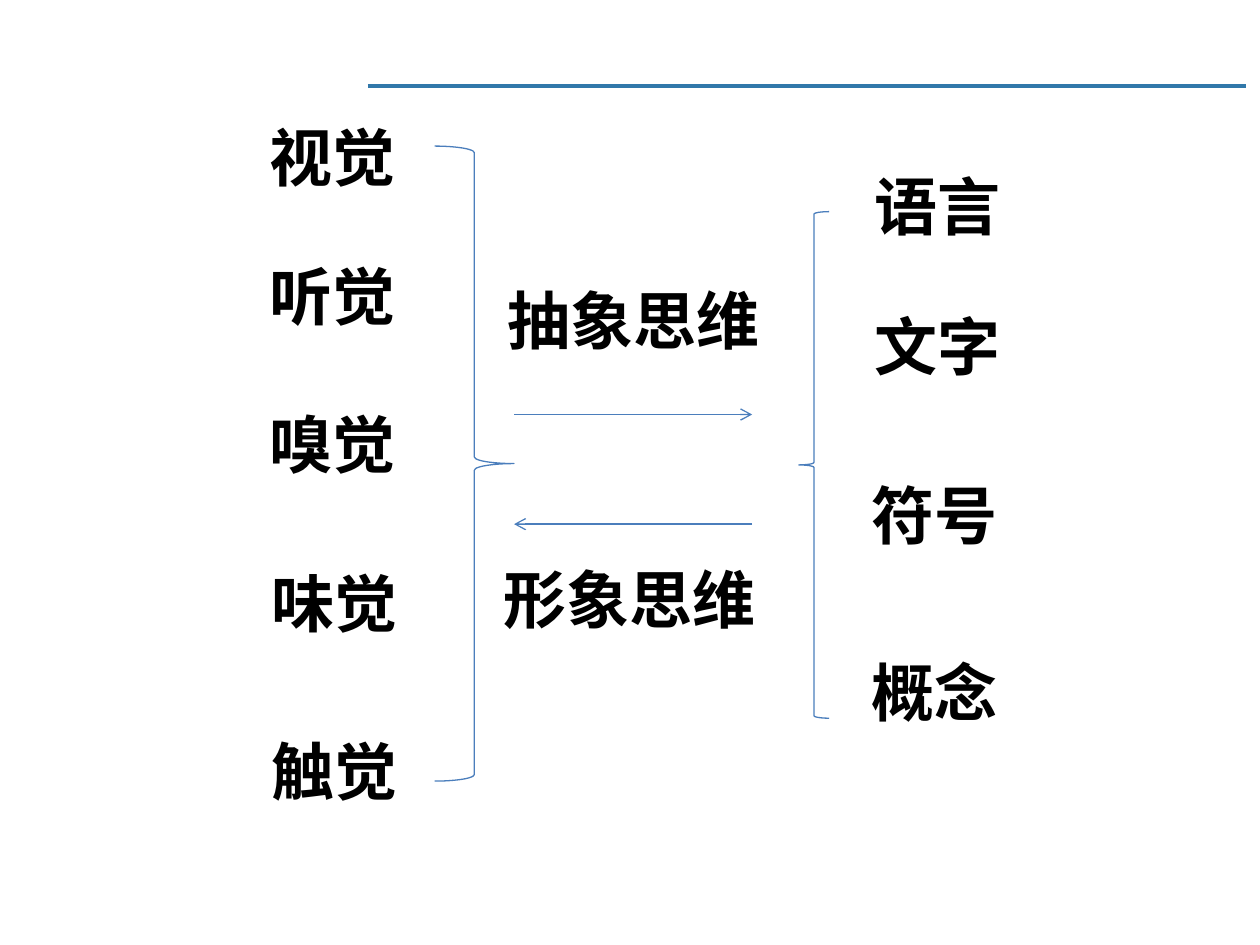
import pptx
import pptx.dml.color
import pptx.enum.shapes
import pptx.enum.text
import pptx.oxml.ns
import pptx.util
from lxml import etree
from pptx.util import Inches

BLUE = "4B7EBC"
SHAPES = pptx.enum.shapes.MSO_SHAPE


def color(value):
    """Turn a hex string into a colour."""
    return pptx.dml.color.RGBColor.from_string(value)


def write_text(frame, text, size=36, font="Calibri", fill="000000", bold=True):
    """Put formatted text into a text frame."""
    run = frame.paragraphs[0].add_run()
    run.text = text
    run.font.size = pptx.util.Pt(size)
    run.font.name = font
    run.font.bold = bold
    run.font.color.rgb = color(fill)


class Diagram:
    """Hold the line style and the slide being drawn."""

    def __init__(self, slide, line_color=BLUE, line_width=0.75):
        """Keep the slide and its default line style."""
        self.slide = slide
        self.line_color = line_color
        self.line_width = line_width

    def label(self, text, left, top, width=1.65, height=0.94):
        """Add a vertically centred text label."""
        shape = self.slide.shapes.add_textbox(
            Inches(left), Inches(top), Inches(width), Inches(height))
        shape.text_frame.word_wrap = True
        shape.text_frame.vertical_anchor = pptx.enum.text.MSO_ANCHOR.MIDDLE
        write_text(shape.text_frame, text)

    def brace(self, kind, left, top, width, height):
        """Add an unfilled brace."""
        shape = self.slide.shapes.add_shape(
            kind, Inches(left), Inches(top), Inches(width), Inches(height))
        shape.shadow.inherit = False
        shape.fill.background()
        shape.line.color.rgb = color(self.line_color)
        shape.line.width = pptx.util.Pt(self.line_width)

    def line(self, start, end, y, line_color=None, width=None, arrow=False):
        """Add a horizontal line, with an optional arrowhead at its end."""
        connector = self.slide.shapes.add_connector(
            pptx.enum.shapes.MSO_CONNECTOR.STRAIGHT,
            Inches(start), Inches(y), Inches(end), Inches(y))
        connector.line.color.rgb = color(line_color or self.line_color)
        connector.line.width = pptx.util.Pt(width or self.line_width)
        if arrow:
            etree.SubElement(connector.line._get_or_add_ln(),
                             pptx.oxml.ns.qn("a:tailEnd"), type="arrow")
        etree.SubElement(connector._element.spPr, pptx.oxml.ns.qn("a:effectLst"))


def main():
    """Build and save the slide."""
    presentation = pptx.Presentation()
    presentation.slide_width = Inches(10)
    presentation.slide_height = Inches(7.5)
    diagram = Diagram(presentation.slides.add_slide(presentation.slide_layouts[6]))

    diagram.line(2.92, 9.89, 0.68, line_color="3178AA", width=2.25)

    senses = [("视觉", 2.04, 0.77), ("听觉", 2.04, 1.87), ("嗅觉", 2.04, 3.05),
              ("味觉", 2.06, 4.31), ("触觉", 2.06, 5.64)]
    expressions = [("语言", 6.84, 1.16), ("文字", 6.84, 2.27),
                   ("符号", 6.82, 3.61), ("概念", 6.82, 5.02)]
    for text, left, top in senses + expressions:
        diagram.label(text, left, top)

    diagram.brace(SHAPES.RIGHT_BRACE, 3.45, 1.16, 0.63, 5.04)
    diagram.brace(SHAPES.LEFT_BRACE, 6.34, 1.68, 0.24, 4.02)

    diagram.line(4.08, 5.97, 3.29, arrow=True)
    diagram.line(5.97, 4.08, 4.16, arrow=True)
    diagram.label("抽象思维", 3.93, 2.17, width=2.37, height=0.72)
    diagram.label("形象思维", 3.9, 4.39, width=2.37, height=0.72)

    presentation.save("out.pptx")


if __name__ == "__main__":
    main()
